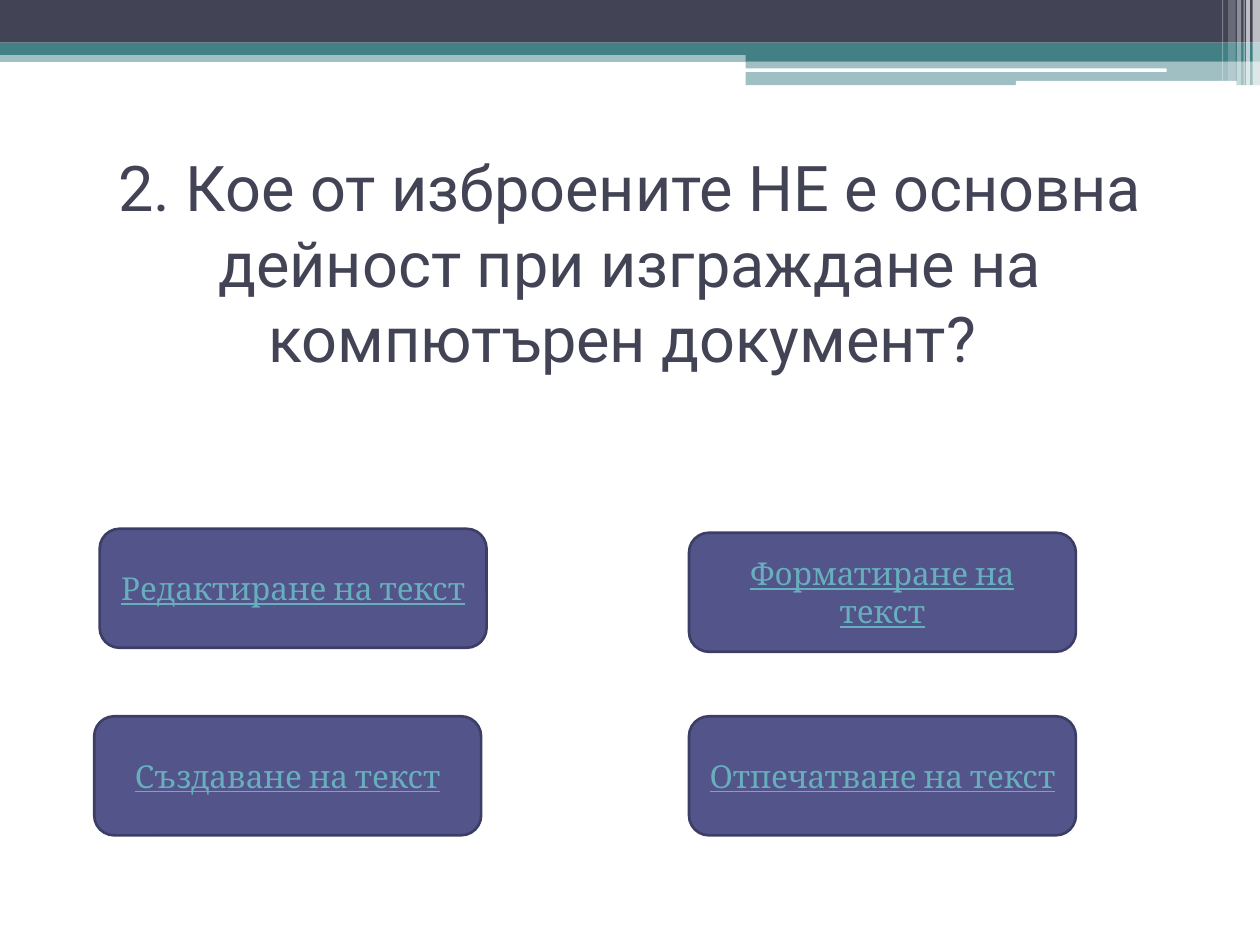
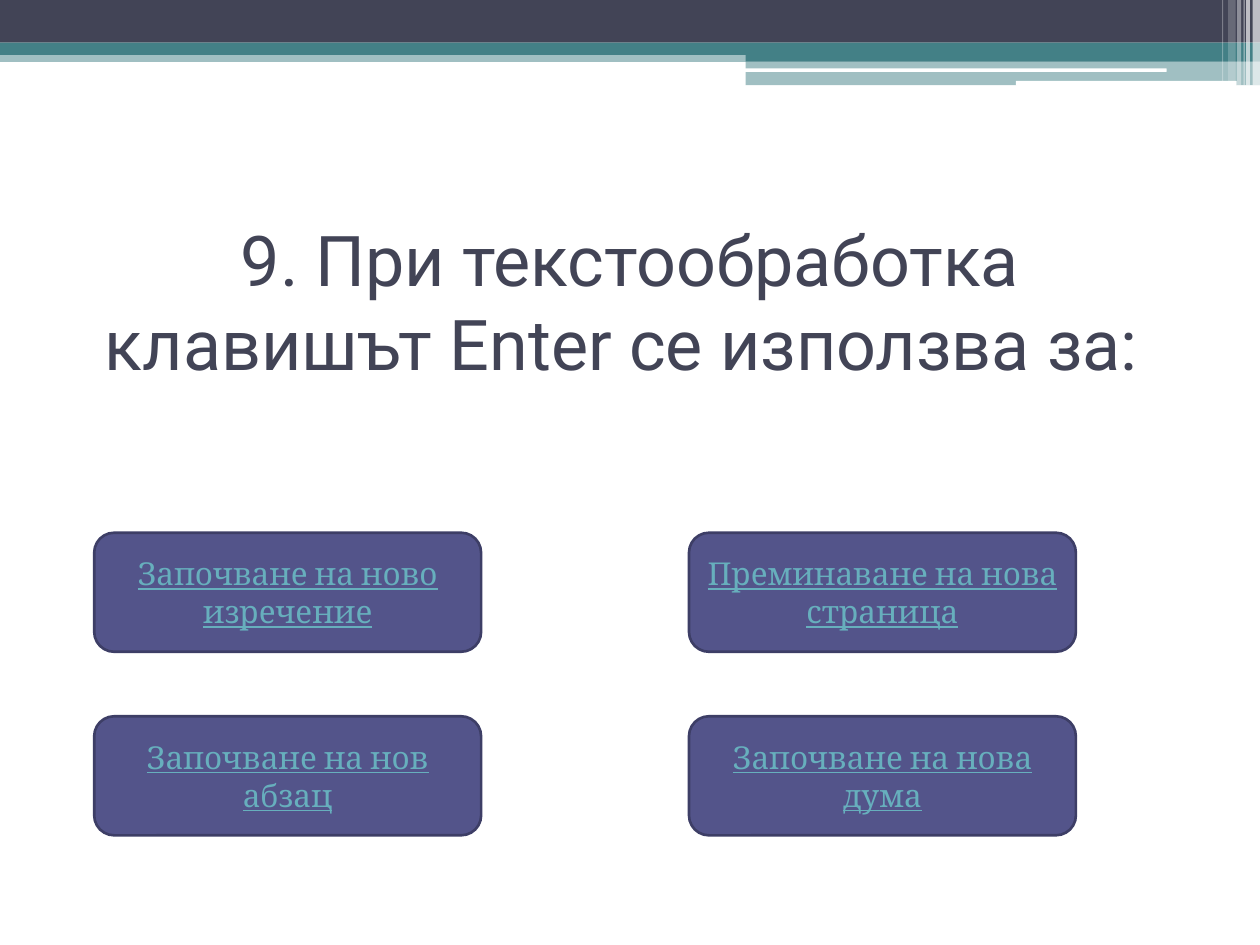
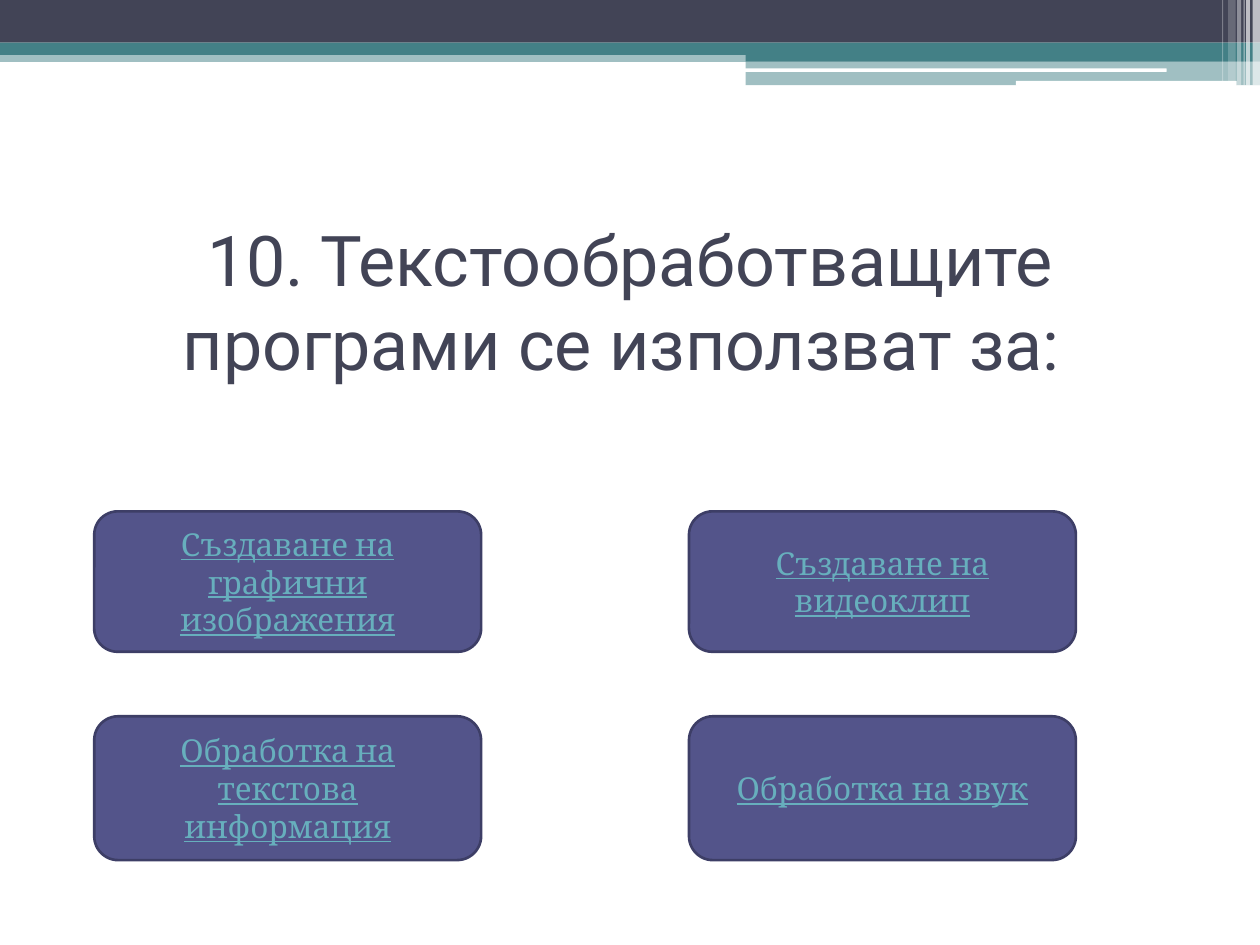
import collections

import pptx
import pptx.dml.color
import pptx.enum.shapes
import pptx.enum.text
import pptx.oxml
import pptx.oxml.ns
import pptx.util

Cm, Pt = pptx.util.Cm, pptx.util.Pt
RGB = pptx.dml.color.RGBColor
FORMS = pptx.enum.shapes.MSO_SHAPE
ANCHOR = pptx.enum.text.MSO_ANCHOR
ALIGN = pptx.enum.text.PP_ALIGN
qn = pptx.oxml.ns.qn

WHITE = RGB(0xFF, 0xFF, 0xFF)
SLATE = RGB(0x42, 0x44, 0x56)
TEAL = RGB(0x43, 0x80, 0x86)
VIOLET = RGB(0x53, 0x54, 0x8A)
EDGE = RGB(0x3D, 0x3E, 0x66)
AQUA = RGB(0x67, 0xAF, 0xBD)

# All box values are centimetres.
Box = collections.namedtuple("Box", "left top width height")
PAGE = Box(0, 0, 25.4, 19.05)
HEAD = Box(0, 0, 25.4, 1.73)
TITLE = Box(1.27, 3.18, 22.86, 5.74)
GRID = Box(1.9, 10.74, 19.79, 6.1)
CELL = Box(0, 0, 7.8, 2.4)

# Left, top, width, height, colour, opacity in percent
BANDS = [
    (0, 1.02, 25.4, 0.23, TEAL, 50),
    (0, 0, 25.4, 0.86, SLATE, 100),
    (0, 0.86, 25.4, 0.25, TEAL, 100),
    (15.03, 0.99, 10.37, 0.25, TEAL, 100),
    (15.03, 1.24, 10.37, 0.48, TEAL, 50),
]
LINES = [
    (15.01, 1.38, 8.51, 0.07, WHITE, 100),
    (20.48, 1.63, 4.45, 0.1, WHITE, 100),
]
# Left, width, height, opacity in percent
STRIPES = [
    (25.25, 0.15, 1.73, 65),
    (25.12, 0.08, 1.73, 65),
    (25.07, 0.02, 1.73, 60),
    (24.94, 0.08, 1.73, 40),
    (24.76, 0.15, 1.63, 20),
    (24.64, 0.02, 1.63, 30),
]


def place(shape, box):
    shape.left, shape.top = Cm(box.left), Cm(box.top)
    shape.width, shape.height = Cm(box.width), Cm(box.height)


def write(shape, text, font, size, color, under=None, foot=0.13):
    """Fill the shape with centred text; foot is the bottom inset in cm."""
    frame = shape.text_frame
    frame.word_wrap = True
    frame.auto_size = pptx.enum.text.MSO_AUTO_SIZE.NONE
    frame.vertical_anchor = ANCHOR.MIDDLE
    frame.margin_bottom = Cm(foot)
    para = frame.paragraphs[0]
    para.alignment = ALIGN.CENTER
    run = para.add_run()
    run.text = text
    run.font.name, run.font.size = font, Pt(size)
    run.font.color.rgb = color
    run.font.underline = under


def block(slide, form, box, color, alpha=100):
    shape = slide.shapes.add_shape(form, *map(Cm, box))
    shape.shadow.inherit = False
    shape.fill.solid()
    shape.fill.fore_color.rgb = color
    shape.line.fill.background()
    if alpha < 100:
        tint = shape.element.spPr.find(".//" + qn("a:srgbClr"))
        node = pptx.oxml.parse_xml(
            f'<a:alpha {pptx.oxml.ns.nsdecls("a")} val="{alpha * 1000}"/>')
        tint.append(node)
    return shape


def header(slide, master, box):
    """Draw the header parts and move them to the master, behind its text."""
    stripes = [(x, 0, w, h, WHITE, a) for x, w, h, a in STRIPES]
    parts = [(FORMS.RECTANGLE, part) for part in BANDS]
    parts += [(FORMS.ROUNDED_RECTANGLE, part) for part in LINES]
    parts += [(FORMS.RECTANGLE, part) for part in stripes]
    tree = master.element.cSld.spTree
    for index, (form, (x, y, w, h, color, alpha)) in enumerate(parts):
        spot = Box(box.left + x, box.top + y, w, h)
        node = block(slide, form, spot, color, alpha).element
        node.nvSpPr.cNvPr.id = 20 + index
        tree.insert(2 + index, node)


def title(slide, box, text, size, foot):
    place(slide.shapes.title, box)
    write(slide.shapes.title, text, "Roboto", size, SLATE, foot=foot)


def answers(slide, box, texts, grow, shift):
    """Set a two by two grid; grow stretches the rows outwards,
    shift moves the first button."""
    for index, text in enumerate(texts):
        row, col = divmod(index, 2)
        left = box.left + col * (box.width - CELL.width)
        top = box.top + row * (box.height - CELL.height)
        if row == 0:
            top -= grow[0]
        if index == 0:
            left, top = left + shift[0], top + shift[1]
        spot = Box(left, top, CELL.width, CELL.height + grow[row])
        button = block(slide, FORMS.ROUNDED_RECTANGLE, spot, VIOLET)
        button.line.color.rgb = EDGE
        button.line.width = Pt(1.5)
        write(button, text, "Cambria", 18, AQUA, under=True)


def quiz(deck, text, texts, size=40, foot=0.13, grow=(0, 0), shift=(0, 0)):
    slide = deck.slides.add_slide(deck.slide_layouts.get_by_name("Title Only"))
    title(slide, TITLE, text, size, foot)
    answers(slide, GRID, texts, grow, shift)
    return slide


def main():
    deck = pptx.Presentation()
    deck.slide_width, deck.slide_height = Cm(PAGE.width), Cm(PAGE.height)
    first = quiz(
        deck,
        "2. Кое от изброените НЕ е основна дейност при изграждане на "
        "компютърен документ? ",
        ["Редактиране на текст", "Форматиране на текст",
         "Създаване на текст", "Отпечатване на текст"],
        size=36, foot=1.66, shift=(0.11, -0.08))
    header(first, deck.slide_master, HEAD)
    quiz(
        deck,
        "9. При текстообработка клавишът Enter се използва за: ",
        ["Започване на ново изречение", "Преминаване на нова страница",
         "Започване на нов абзац", "Започване на нова дума"])
    quiz(
        deck,
        "10. Текстообработващите програми се използват за: ",
        ["Създаване на графични изображения", "Създаване на видеоклип",
         "Обработка на текстова информация", "Обработка на звук"],
        grow=(0.43, 0.5))
    deck.save("out.pptx")


if __name__ == "__main__":
    main()
